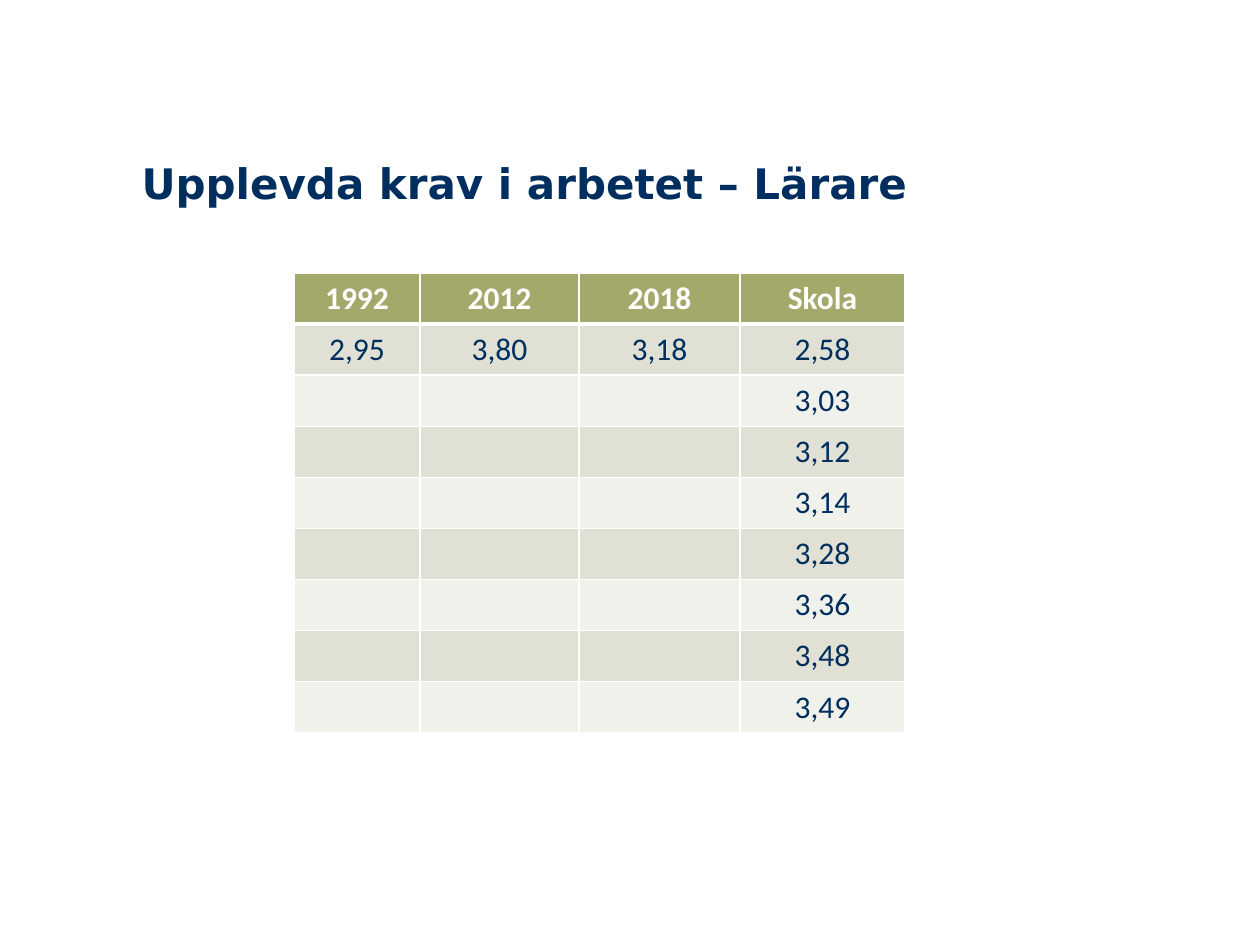
from lxml.etree import SubElement
from pptx import Presentation
from pptx.dml.color import RGBColor
from pptx.enum.text import MSO_ANCHOR, PP_ALIGN
from pptx.oxml.ns import qn
from pptx.util import Pt

EMU_PER_PX = 914400 / 126

NAVY = RGBColor(0x00, 0x2F, 0x5F)
OLIVE = RGBColor(0xA3, 0xA8, 0x6B)
BAND_DARK = RGBColor(0xE0, 0xE1, 0xD4)
BAND_LIGHT = RGBColor(0xF0, 0xF1, 0xEB)
WHITE = RGBColor(0xFF, 0xFF, 0xFF)

HEADINGS = ["1992", "2012", "2018", "Skola"]
YEAR_MEANS = ["2,95", "3,80", "3,18"]
SCHOOL_MEANS = ["2,58", "3,03", "3,12", "3,14", "3,28", "3,36", "3,48", "3,49"]
COLUMN_WIDTHS = [126, 159, 161, 165]
ROW_HEIGHT = 51


def px(length):
    return round(length * EMU_PER_PX)


def add_run(paragraph, text, font_name, size, color, bold):
    run = paragraph.add_run()
    run.text = text
    run.font.name = font_name
    run.font.size = Pt(size)
    run.font.color.rgb = color
    run.font.bold = bold


def set_borders(cell, widths):
    """Draw white cell borders; widths maps each side (L, R, T, B) to points."""
    properties = cell._tc.get_or_add_tcPr()
    for position, (side, width) in enumerate(widths.items()):
        line = SubElement(properties, qn(f"a:ln{side}"), w=str(Pt(width)))
        fill = SubElement(line, qn("a:solidFill"))
        SubElement(fill, qn("a:srgbClr"), val=str(WHITE))
        properties.insert(position, line)


def place_title(slide, left, top, width, height):
    title = slide.shapes.title
    title.left, title.top = px(left), px(top)
    title.width, title.height = px(width), px(height)
    frame = title.text_frame
    frame.word_wrap = True
    frame.vertical_anchor = MSO_ANCHOR.MIDDLE
    heading = frame.paragraphs[0]
    heading.alignment = PP_ALIGN.LEFT
    add_run(heading, "Upplevda krav i arbetet – Lärare", "DejaVu Sans", 24, NAVY, True)


def fill_cell(cell, text, row):
    is_header = row == 0
    cell.fill.solid()
    if is_header:
        cell.fill.fore_color.rgb = OLIVE
    else:
        cell.fill.fore_color.rgb = BAND_DARK if row % 2 else BAND_LIGHT
    set_borders(cell, {"L": 1, "R": 1, "T": 3 if row == 1 else 1, "B": 3 if is_header else 1})
    paragraph = cell.text_frame.paragraphs[0]
    paragraph.alignment = PP_ALIGN.CENTER
    if text:
        add_run(paragraph, text, "Calibri", 18, WHITE if is_header else NAVY, is_header)


def add_demand_table(slide, left, top):
    blanks = [""] * len(YEAR_MEANS)
    rows = [HEADINGS]
    for index, school_mean in enumerate(SCHOOL_MEANS):
        rows.append((blanks if index else YEAR_MEANS) + [school_mean])

    demand = slide.shapes.add_table(
        len(rows), len(HEADINGS), px(left), px(top),
        px(sum(COLUMN_WIDTHS)), px(ROW_HEIGHT * len(rows)),
    ).table
    for column, width in zip(demand.columns, COLUMN_WIDTHS):
        column.width = px(width)
    for row, texts in enumerate(rows):
        demand.rows[row].height = px(ROW_HEIGHT)
        for column, text in enumerate(texts):
            fill_cell(demand.cell(row, column), text, row)


def main():
    deck = Presentation()
    deck.slide_width, deck.slide_height = px(1260), px(945)
    slide = deck.slides.add_slide(deck.slide_layouts[5])
    place_title(slide, 129, 147, 944, 72)
    add_demand_table(slide, 294, 273)
    deck.save("out.pptx")


if __name__ == "__main__":
    main()
